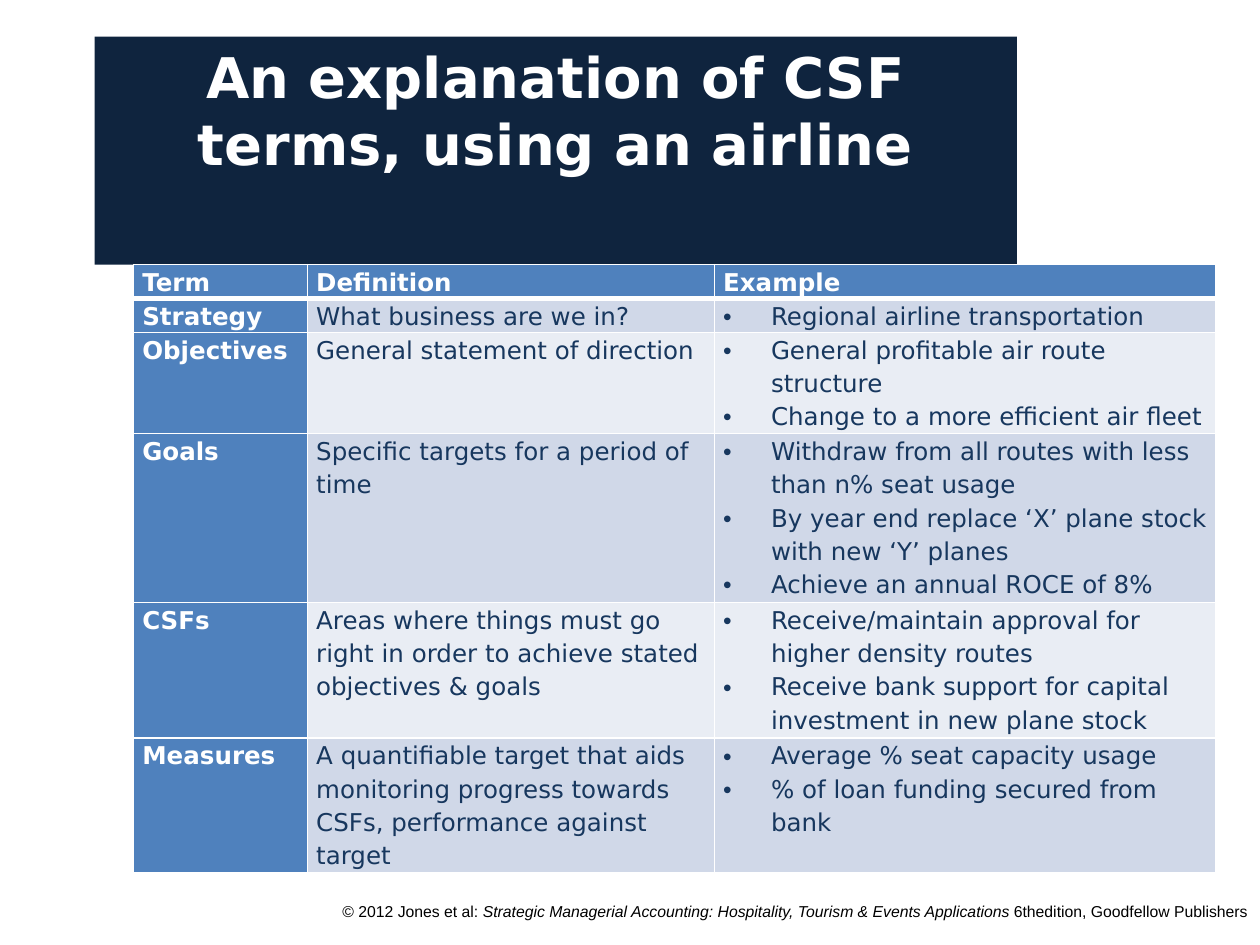
from lxml import etree
from pptx import Presentation
from pptx.dml.color import RGBColor
from pptx.enum.shapes import MSO_SHAPE as Shape
from pptx.enum.text import MSO_ANCHOR as Anchor, PP_ALIGN as Align
from pptx.oxml.ns import qn
from pptx.util import Inches, Pt

COLORS = {
    "navy": "0F243E", "blue": "4F81BD", "text": "17375E",
    "band_dark": "D0D8E8", "band_light": "E9EDF4",
    "white": "FFFFFF", "black": "000000",
}
COLUMN_WIDTHS = [1.38, 3.23, 3.98]
ROW_HEIGHTS = [0.23, 0.26, 0.78, 1.3, 1.04, 1.04]
HEADINGS = ["Term", "Definition", "Example"]
TERMS = [
    ("Strategy", "What business are we in?", ["Regional airline transportation"]),
    ("Objectives", "General statement of direction",
     ["General profitable air route structure",
      "Change to a more efficient air fleet"]),
    ("Goals", "Specific targets for a period of time",
     ["Withdraw from all routes with less than n% seat usage",
      "By year end replace ‘X’ plane stock with new ‘Y’ planes",
      "Achieve an annual ROCE of 8%"]),
    ("CSFs",
     "Areas where things must go right in order to achieve stated objectives & goals",
     ["Receive/maintain approval for higher density routes",
      "Receive bank support for capital investment in new plane stock"]),
    ("Measures",
     "A quantifiable target that aids monitoring progress towards CSFs, "
     "performance against target",
     ["Average % seat capacity usage", "% of loan funding secured from bank"]),
]


def color(name):
    return RGBColor.from_string(COLORS[name])


def add_text(paragraph, text, *, size=14, font="DejaVu Sans", fill="text",
             bold=False, italic=False):
    run = paragraph.add_run()
    run.text = text
    run.font.size = Pt(size)
    run.font.name = font
    run.font.bold = bold
    run.font.italic = italic
    run.font.color.rgb = color(fill)


def add_bullet(paragraph):
    properties = paragraph._p.get_or_add_pPr()
    properties.set("marL", str(Inches(0.38)))
    properties.set("indent", str(-Inches(0.38)))
    etree.SubElement(properties, qn("a:buFont"), typeface="Arial")
    etree.SubElement(properties, qn("a:buChar"), char="•")


def add_borders(cell, **widths):
    properties = cell._tc.get_or_add_tcPr()
    for side in "LRTB":
        line = etree.SubElement(properties, qn(f"a:ln{side}"),
                                w=str(Pt(widths.get(side, 1))))
        line_fill = etree.SubElement(line, qn("a:solidFill"))
        etree.SubElement(line_fill, qn("a:srgbClr"), val=COLORS["white"])


def fill_cell(cell, texts, background, *, bulleted=False, borders=None, **text_format):
    add_borders(cell, **(borders or {}))
    cell.fill.solid()
    cell.fill.fore_color.rgb = color(background)
    cell.margin_left = cell.margin_right = Inches(0.07)
    cell.margin_top = cell.margin_bottom = 0
    cell.vertical_anchor = Anchor.TOP
    frame = cell.text_frame
    for index, text in enumerate(texts):
        paragraph = frame.add_paragraph() if index else frame.paragraphs[0]
        if bulleted:
            add_bullet(paragraph)
        paragraph.line_spacing = 1.15
        add_text(paragraph, text, **text_format)


def add_footer(slide):
    box = slide.shapes.add_textbox(Inches(2.23), Inches(7.11), Inches(7.77), Inches(0.39))
    box.text_frame.word_wrap = True
    paragraph = box.text_frame.paragraphs[0]
    paragraph.alignment = Align.RIGHT
    for text, italic in [
        ("© 2012 Jones et al: ", False),
        ("Strategic Managerial Accounting: Hospitality, Tourism & Events Applications ", True),
        ("6thedition, Goodfellow Publishers", False),
    ]:
        add_text(paragraph, text, size=9, font="Arial", fill="black", italic=italic)


def add_title(slide):
    banner = slide.shapes.add_shape(
        Shape.RECTANGLE, Inches(0.75), Inches(0.29), Inches(7.32), Inches(1.81))
    banner.shadow.inherit = False
    banner.fill.solid()
    banner.fill.fore_color.rgb = color("navy")
    banner.line.fill.background()
    frame = banner.text_frame
    frame.word_wrap = True
    frame.vertical_anchor = Anchor.TOP
    paragraph = frame.paragraphs[0]
    paragraph.alignment = Align.CENTER
    add_text(paragraph, "An explanation of CSF terms, using an airline",
             size=32, fill="white", bold=True)


def add_terms_table(slide):
    table = slide.shapes.add_table(
        len(ROW_HEIGHTS), len(COLUMN_WIDTHS), Inches(1.06), Inches(2.1),
        Inches(sum(COLUMN_WIDTHS)), Inches(sum(ROW_HEIGHTS))).table
    table.horz_banding = False
    for column, width in zip(table.columns, COLUMN_WIDTHS):
        column.width = Inches(width)
    for row, height in zip(table.rows, ROW_HEIGHTS):
        row.height = Inches(height)

    # Header row, with a thick rule below it
    for index, heading in enumerate(HEADINGS):
        fill_cell(table.cell(0, index), [heading], "blue", borders={"B": 3},
                  fill="white", bold=True)

    # Term rows in alternating bands
    for index, (term, definition, examples) in enumerate(TERMS, start=1):
        band = "band_dark" if index % 2 else "band_light"
        borders = {"T": 3} if index == 1 else {}
        fill_cell(table.cell(index, 0), [term], "blue", borders=borders,
                  fill="white", bold=True)
        fill_cell(table.cell(index, 1), [definition], band, borders=borders)
        fill_cell(table.cell(index, 2), examples, band, borders=borders, bulleted=True)


def main():
    presentation = Presentation()
    presentation.slide_width = Inches(10)
    presentation.slide_height = Inches(7.5)
    slide = presentation.slides.add_slide(presentation.slide_layouts[6])
    add_footer(slide)
    add_title(slide)
    add_terms_table(slide)
    presentation.save("out.pptx")


if __name__ == "__main__":
    main()
